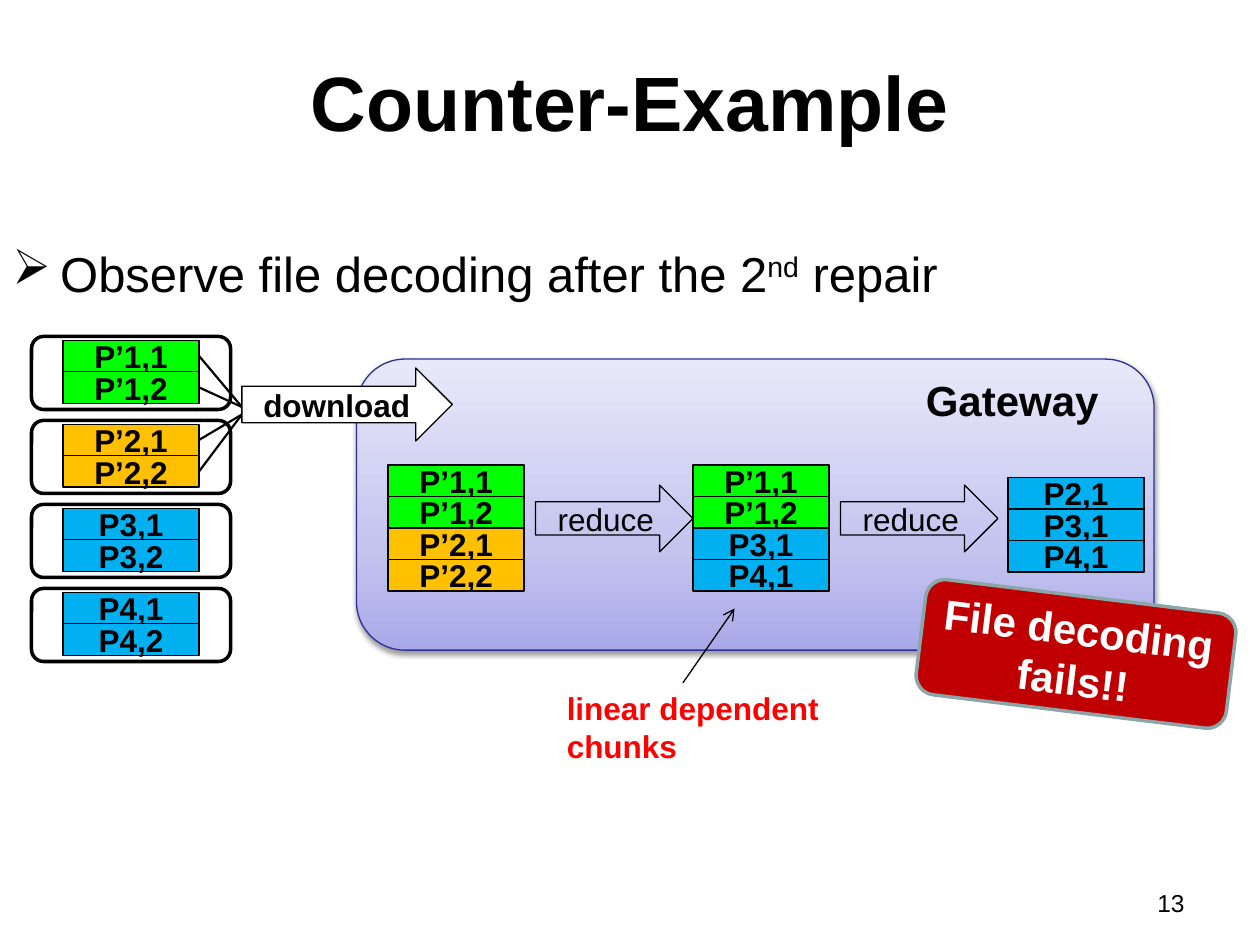
from copy import deepcopy
from pptx import Presentation
from pptx.dml.color import RGBColor
from pptx.enum.shapes import MSO_CONNECTOR, MSO_SHAPE
from pptx.enum.text import MSO_ANCHOR, PP_ALIGN
from pptx.oxml.ns import qn
from pptx.oxml.xmlchemy import OxmlElement
from pptx.util import Inches, Pt

INK = {
    "black": "000000", "white": "FFFFFF", "red": "FF0000", "brick": "C00000",
    "green": "00FF00", "amber": "FFC000", "blue": "00B0F0",
    "navy": "2F2F98", "gray": "8AA6A8",
    "deep": "A9A9E9", "mid": "C4C4EF", "pale": "E8E8FA",
}


def write(shape, text, size=18, bold=False, color="black", align=PP_ALIGN.LEFT,
          anchor=MSO_ANCHOR.TOP, wrap=True, side=0.1, edge=0.05):
    """Fill a shape with text; parts between bars are raised."""
    frame = shape.text_frame
    frame.word_wrap = wrap
    frame.vertical_anchor = anchor
    frame.margin_left = frame.margin_right = Inches(side)
    frame.margin_top = frame.margin_bottom = Inches(edge)
    for n, line in enumerate(text.split("\n")):
        para = frame.add_paragraph() if n else frame.paragraphs[0]
        para.alignment = align
        for i, part in enumerate(line.split("|")):
            run = para.add_run()
            run.text = part
            run.font.name = "Arial"
            run.font.size = Pt(size)
            run.font.bold = bold
            run.font.color.rgb = RGBColor.from_string(INK[color])
            if i % 2:
                run.font._element.set("baseline", "30000")


def draw(kind, x, y, w, h, fill=None, line="black", width=0.75):
    """Add a preset shape with a plain fill and outline."""
    shape = deck.add_shape(kind, Inches(x), Inches(y), Inches(w), Inches(h))
    shape.shadow.inherit = False
    if fill:
        shape.fill.solid()
        shape.fill.fore_color.rgb = RGBColor.from_string(INK[fill])
    else:
        shape.fill.background()
    shape.line.color.rgb = RGBColor.from_string(INK[line])
    shape.line.width = Pt(width)
    return shape


prs = Presentation()
prs.slide_width, prs.slide_height = Inches(10), Inches(7.5)
deck = prs.slides.add_slide(prs.slide_layouts[6]).shapes

# Cloud panel with gradient and soft shadow
panel = draw(MSO_SHAPE.ROUNDED_RECTANGLE, 2.83, 2.85, 6.33, 2.31, line="navy")
panel.fill.gradient()
panel.fill.gradient_angle = 90
props = panel._element.spPr
stops = props.find(".//" + qn("a:gsLst"))
stops.append(deepcopy(stops[1]))
shades = [("deep", 0), ("mid", 0.35), ("pale", 1)]
for stop, (name, place) in zip(panel.fill.gradient_stops, shades):
    stop.color.rgb = RGBColor.from_string(INK[name])
    stop.position = place
shade = OxmlElement("a:outerShdw")
for key, val in [("blurRad", "40000"), ("dist", "20000"), ("dir", "5400000"),
                 ("rotWithShape", "0")]:
    shade.set(key, val)
tint = OxmlElement("a:srgbClr")
tint.set("val", INK["black"])
alpha = OxmlElement("a:alpha")
alpha.set("val", "38000")
tint.append(alpha)
shade.append(tint)
props.find(qn("a:effectLst")).append(shade)

# Node frames
pitch = 2 / 3
for i in range(4):
    draw(MSO_SHAPE.ROUNDED_RECTANGLE, 0.25, 2.67 + i * pitch, 1.58, 0.58, width=2)

# Chunk stacks: four nodes, then the three stages of the repair
stacks = [
    (0.5, 2.7, ["P’1,1", "P’1,2"]),
    (0.5, 2.7 + pitch, ["P’2,1", "P’2,2"]),
    (0.5, 2.7 + 2 * pitch, ["P3,1", "P3,2"]),
    (0.5, 2.7 + 3 * pitch, ["P4,1", "P4,2"]),
    (3.08, 3.69, ["P’1,1", "P’1,2", "P’2,1", "P’2,2"]),
    (5.5, 3.69, ["P’1,1", "P’1,2", "P3,1", "P4,1"]),
    (8, 3.79, ["P2,1", "P3,1", "P4,1"]),
]
hues = {"P’1": "green", "P’2": "amber"}
cells = []
for x, y, names in stacks:
    for i, name in enumerate(names):
        cell = draw(MSO_SHAPE.RECTANGLE, x, y + i * 0.25, 1.08, 0.25,
                    fill=hues.get(name[:3], "blue"))
        write(cell, name, bold=True, align=PP_ALIGN.CENTER,
              anchor=MSO_ANCHOR.MIDDLE, wrap=False, edge=0)
        cells.append(cell)

# Download lines from the first four chunks, and the pointer to the third stack
links = [(cells[i], (1.58, 2.83), (1.92, 3.23 if i < 2 else 3.29), 1.25)
         for i in range(4)]
links.append((None, (5.42, 5.42), (5.83, 4.83), 0.75))
for cell, start, end, width in links:
    link = deck.add_connector(MSO_CONNECTOR.STRAIGHT,
                              *[Inches(v) for v in start + end])
    if cell:
        link.begin_connect(cell, 3)
    link.line.color.rgb = RGBColor.from_string(INK["black"])
    link.line.width = Pt(width)
    if not cell:
        head = OxmlElement("a:tailEnd")
        head.set("type", "arrow")
        link.line._get_or_add_ln().append(head)
    link._element.spPr.append(OxmlElement("a:effectLst"))

# Block arrows
load = draw(MSO_SHAPE.RIGHT_ARROW, 1.92, 2.92, 1.67, 0.58, fill="white")
write(load, "download", bold=True, anchor=MSO_ANCHOR.MIDDLE, wrap=False, side=0.17)
for x in (4.25, 6.67):
    step = draw(MSO_SHAPE.RIGHT_ARROW, x, 3.85, 1.25, 0.53)
    write(step, "reduce", align=PP_ALIGN.CENTER, anchor=MSO_ANCHOR.MIDDLE, edge=0)

# Verdict badge
badge = draw(MSO_SHAPE.ROUNDED_RECTANGLE, 7.3, 4.73, 2.48, 0.92,
             fill="brick", line="gray", width=2)
badge.rotation = 7
write(badge, "File decoding fails!!", size=24, bold=True, color="white",
      align=PP_ALIGN.CENTER, anchor=MSO_ANCHOR.MIDDLE, side=0.05)

# Title, bullet, labels and page number
notes = [
    ((0.5, 0.17, 9, 1.25), "Counter-Example",
     dict(size=44, bold=True, align=PP_ALIGN.CENTER, anchor=MSO_ANCHOR.MIDDLE)),
    ((7.25, 2.92, 1.64, 0.5), "Gateway", dict(size=24, bold=True, wrap=False)),
    ((4.4, 5.42, 2.33, 0.71), "linear dependent\nchunks",
     dict(bold=True, color="red")),
    ((7.17, 7, 2.33, 0.35), "13", dict(size=14, align=PP_ALIGN.RIGHT)),
    ((0, 1.88, 10, 0.62), "Observe file decoding after the 2|nd| repair",
     dict(size=28)),
]
for spot, text, style in notes:
    note = deck.add_textbox(*[Inches(v) for v in spot])
    write(note, text, **style)

# Arrow bullet on the last note
para = note.text_frame.paragraphs[0]._p.get_or_add_pPr()
para.set("marL", str(Inches(0.38)))
para.set("indent", str(Inches(-0.38)))
mark = OxmlElement("a:buChar")
mark.set("char", "➢")
para.append(mark)

prs.save("out.pptx")
